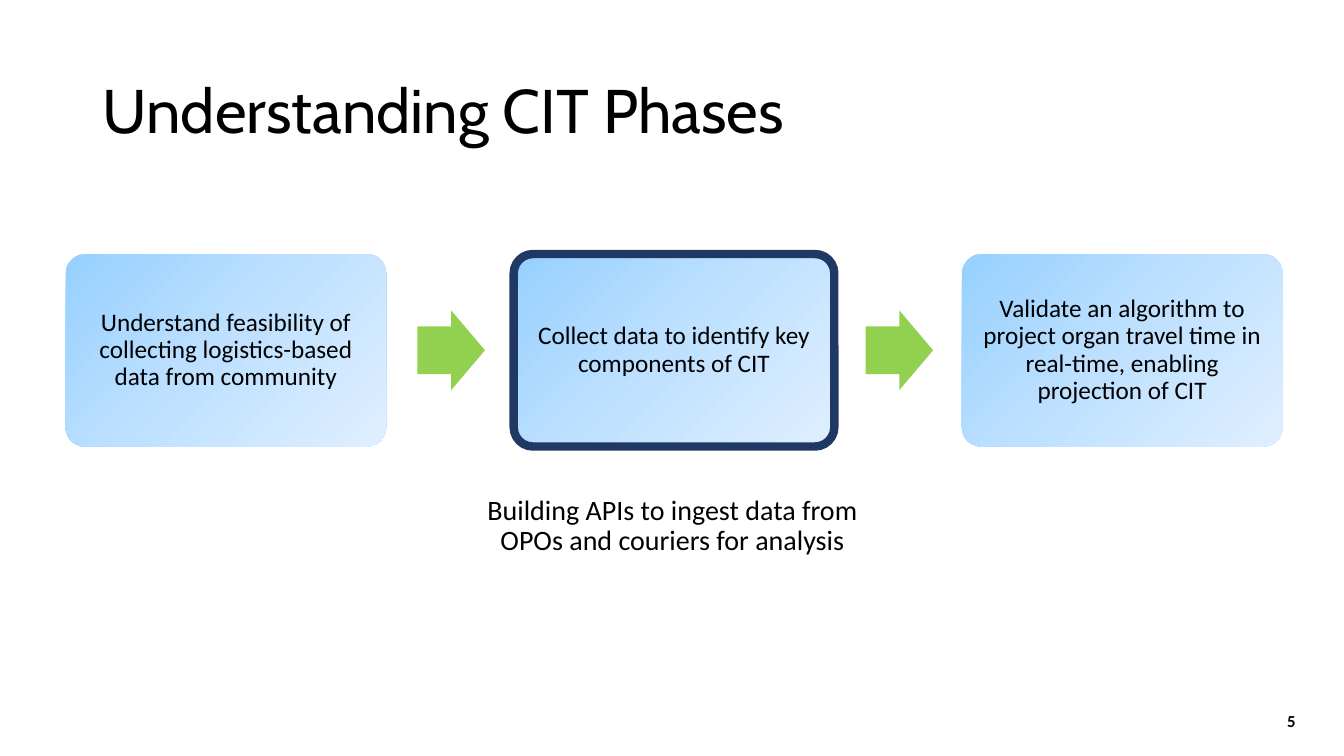
from copy import deepcopy

from pptx import Presentation
from pptx.dml.color import RGBColor
from pptx.enum import shapes, text
from pptx.util import Inches, Pt

COLORS = {
    "text": "000000",
    "arrow": "92D050",
    "highlight": "203864",
    "grad_start": "96D0FF",
    "grad_middle": "BFE1FF",
    "grad_end": "E0EFFF",
}
PHASES = [
    "Understand feasibility of collecting logistics-based data from community",
    "Collect data to identify key components of CIT",
    "Validate an algorithm to project organ travel time in real-time, enabling projection of CIT",
]
CURRENT_PHASE = 1


def rgb(name):
    return RGBColor.from_string(COLORS[name])


def place(sp, box):
    sp.left, sp.top, sp.width, sp.height = (Inches(v) for v in box)


def write(sp, content, size, font="Calibri", align=text.PP_ALIGN.CENTER,
          anchor=text.MSO_ANCHOR.MIDDLE, spacing=0.9, bold=False):
    tf = sp.text_frame
    tf.text = content
    tf.word_wrap = True
    tf.auto_size = text.MSO_AUTO_SIZE.NONE
    tf.vertical_anchor = anchor
    p = tf.paragraphs[0]
    p.alignment = align
    p.line_spacing = spacing
    r = p.runs[0]
    r.font.name = font
    r.font.size = Pt(size)
    r.font.bold = bold
    r.font.color.rgb = rgb("text")


def add_text(s, box, content, size, **style):
    sp = s.shapes.add_textbox(*(Inches(v) for v in box))
    write(sp, content, size, **style)


def add_title(s, box, content):
    sp = s.shapes.title
    place(sp, box)
    write(sp, content, 44, font="Cabin", align=text.PP_ALIGN.LEFT)


def add_preset(s, kind, box, adjustments):
    sp = s.shapes.add_shape(kind, *(Inches(v) for v in box))
    sp.shadow.inherit = False
    sp.line.fill.background()
    for i, value in enumerate(adjustments):
        sp.adjustments[i] = value
    return sp


def fill_gradient(sp):
    sp.fill.gradient()
    sp.fill.gradient_angle = 315
    stop_list = sp.fill._xPr.xpath(".//a:gsLst")[0]
    stop_list.append(deepcopy(stop_list[-1]))
    names = ("grad_start", "grad_middle", "grad_end")
    for stop, name, position in zip(sp.fill.gradient_stops, names, (0, 0.5, 1)):
        stop.position = position
        stop.color.rgb = rgb(name)


def add_phase(s, box, content, current):
    sp = add_preset(s, shapes.MSO_SHAPE.ROUNDED_RECTANGLE, box, [0.1])
    fill_gradient(sp)
    if current:
        sp.line.color.rgb = rgb("highlight")
        sp.line.width = Pt(6)
    tf = sp.text_frame
    tf.margin_left = tf.margin_right = tf.margin_top = tf.margin_bottom = Inches(0.07)
    write(sp, content, 18)


def add_arrow(s, box):
    sp = add_preset(s, shapes.MSO_SHAPE.RIGHT_ARROW, box, [0.6, 0.5])
    sp.fill.solid()
    sp.fill.fore_color.rgb = rgb("arrow")


def add_process(s, box):
    left, top, width, height = box
    phase_w, arrow_w, arrow_h, arrow_gap = 3.18, 0.67, 0.79, 0.31
    pitch = (width - phase_w) / (len(PHASES) - 1)
    for i, content in enumerate(PHASES):
        x = left + i * pitch
        add_phase(s, (x, top, phase_w, height), content, i == CURRENT_PHASE)
        if i < len(PHASES) - 1:
            add_arrow(s, (x + phase_w + arrow_gap, top + (height - arrow_h) / 2, arrow_w, arrow_h))


def main():
    prs = Presentation()
    prs.slide_width, prs.slide_height = Inches(13.33), Inches(7.5)
    s = prs.slides.add_slide(prs.slide_layouts[5])
    add_title(s, (0.92, 0.4, 11.5, 1.45), "Understanding CIT Phases")
    add_process(s, (0.65, 2.52, 12.07, 1.91))
    add_text(s, (4.64, 4.87, 4.06, 0.83),
             "Building APIs to ingest data from OPOs and couriers for analysis", 20,
             anchor=text.MSO_ANCHOR.TOP)
    add_text(s, (9.95, 6.95, 3, 0.4), "5", 12, align=text.PP_ALIGN.RIGHT, spacing=1.0, bold=True)
    prs.save("out.pptx")


if __name__ == "__main__":
    main()
